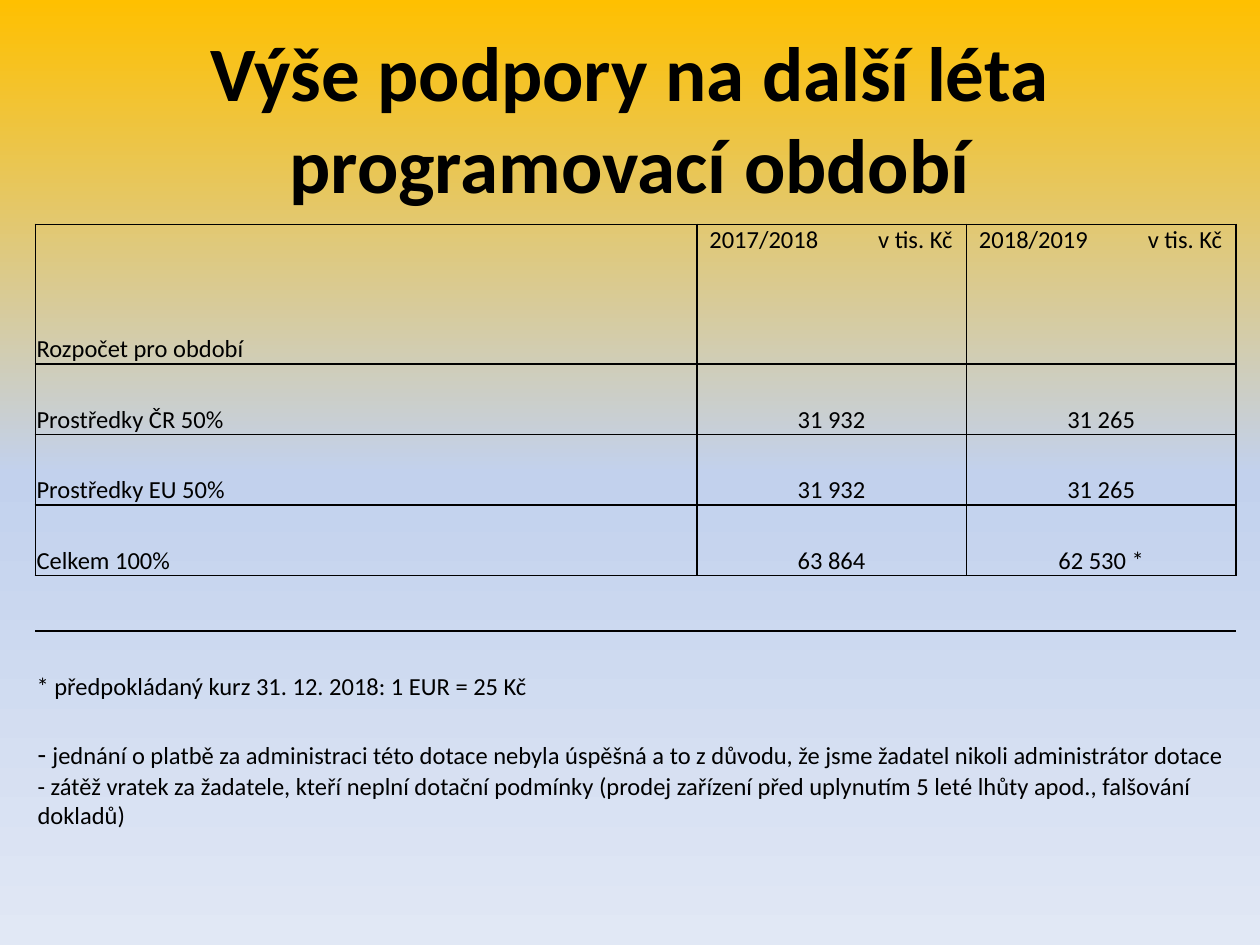
import pptx
import pptx.dml.color
import pptx.enum.text
import pptx.oxml
import pptx.oxml.ns
import pptx.util

Inches, Pt = pptx.util.Inches, pptx.util.Pt
ALIGN, ANCHOR = pptx.enum.text.PP_ALIGN, pptx.enum.text.MSO_ANCHOR
qn, nsdecls = pptx.oxml.ns.qn, pptx.oxml.ns.nsdecls

COLORS = {"text": "000000", "top": "FFC000", "middle": "C2D1ED", "bottom": "E1E8F5"}
FONT = "Calibri"
NO_STYLE = "{2D5ABB26-0587-4C30-8999-92F81FD0307C}"
TAB = Inches(1.34)

BUDGET = [
    ("Rozpočet pro období", "2017/2018\tv tis. Kč", "2018/2019\tv tis. Kč"),
    ("Prostředky ČR 50%", "31 932", "31 265"),
    ("Prostředky EU 50%", "31 932", "31 265"),
    ("Celkem 100%", "63 864", "62 530 *"),
]
RATE_NOTE = "* předpokládaný kurz 31. 12. 2018: 1 EUR = 25 Kč"
REMARKS = [
    [("- ", 16), ("jednání o platbě za administraci této dotace nebyla úspěšná a to z důvodu, "
                  "že jsme žadatel nikoli administrátor dotace", 14)],
    [("- zátěž vratek za žadatele, kteří neplní dotační podmínky (prodej zařízení "
      "před uplynutím 5 leté lhůty apod., falšování dokladů)", 14)],
]


def add_run(p, text, size=14, bold=False, color="text"):
    r = p.add_run()
    r.text = text
    r.font.name, r.font.size, r.font.bold = FONT, Pt(size), bold
    r.font.color.rgb = pptx.dml.color.RGBColor.from_string(COLORS[color])


class SlideBuilder:
    def __init__(self, prs):
        self.s = prs.slides.add_slide(prs.slide_layouts[6])

    def background(self, *stops):
        fill = self.s.background.fill
        fill.gradient()
        fill.gradient_angle = 270
        gs_list = self.s.element.find(".//" + qn("a:gsLst"))
        for gs in list(gs_list):
            gs_list.remove(gs)
        for pos, color in stops:
            gs_list.append(pptx.oxml.parse_xml(
                f'<a:gs {nsdecls("a")} pos="{pos * 1000}">'
                f'<a:srgbClr val="{COLORS[color]}"/></a:gs>'))

    def text(self, box, paragraphs, align=ALIGN.LEFT, anchor=ANCHOR.TOP, indent=0, bold=False):
        """Add a text box; each paragraph is a list of (text, size) runs."""
        tf = self.s.shapes.add_textbox(*map(Inches, box)).text_frame
        tf.word_wrap, tf.vertical_anchor = True, anchor
        for i, runs in enumerate(paragraphs):
            p = tf.paragraphs[0] if i == 0 else tf.add_paragraph()
            p.alignment = align
            p._p.get_or_add_pPr().set("marL", str(Inches(indent)))
            for text, size in runs:
                add_run(p, text, size, bold)

    def table(self, left, top, widths, heights):
        frame = self.s.shapes.add_table(
            len(heights), len(widths), Inches(left), Inches(top),
            Inches(sum(widths)), Inches(sum(heights)))
        table = frame.table
        table.first_row = table.horz_banding = False
        table._tbl.tblPr.find(qn("a:tableStyleId")).text = NO_STYLE
        for col, width in zip(table.columns, widths):
            col.width = Inches(width)
        for row, height in zip(table.rows, heights):
            row.height = Inches(height)
        return table

    def cell(self, cell, text="", align=ALIGN.LEFT, anchor=ANCHOR.BOTTOM, borders=""):
        """Fill in a cell; borders names its ruled sides, out of L, R, T and B."""
        tc_pr = cell._tc.get_or_add_tcPr()
        for side in borders:
            tc_pr.append(pptx.oxml.parse_xml(
                f'<a:ln{side} {nsdecls("a")} w="{Pt(1)}"><a:solidFill>'
                f'<a:srgbClr val="{COLORS["text"]}"/></a:solidFill></a:ln{side}>'))
        cell.fill.background()
        if not text:
            return
        cell.vertical_anchor = anchor
        cell.margin_left = cell.margin_right = cell.margin_top = Inches(0.01)
        cell.margin_bottom = 0
        p = cell.text_frame.paragraphs[0]
        p.alignment = align
        if "\t" in text:
            cell.margin_left, p.alignment = Inches(0.1), ALIGN.LEFT
            p._p.get_or_add_pPr().append(pptx.oxml.parse_xml(
                f'<a:tabLst {nsdecls("a")}><a:tab pos="{TAB}" algn="l"/></a:tabLst>'))
        add_run(p, text)


def main():
    prs = pptx.Presentation()
    prs.slide_width, prs.slide_height = Inches(10), Inches(7.5)
    slide = SlideBuilder(prs)
    slide.background((0, "top"), (50, "middle"), (100, "bottom"))
    slide.text((0.5, 0.3, 9, 1.25), [[("Výše podpory na další léta programovací období", 44)]],
               align=ALIGN.CENTER, anchor=ANCHOR.MIDDLE, bold=True)
    slide.text((0, 5.8, 10, 0.84), REMARKS, indent=0.2)

    table = slide.table(0.28, 1.78, [5.25, 2.14, 2.14], [1.11, 0.56, 0.56, 0.56, 0.44, 0.56])
    for i, row in enumerate(BUDGET):
        for j, text in enumerate(row):
            slide.cell(table.cell(i, j), text, borders="LRTB",
                       align=ALIGN.CENTER if j else ALIGN.LEFT,
                       anchor=ANCHOR.TOP if i == 0 and j else ANCHOR.BOTTOM)
    gap_row, note_row = len(BUDGET), len(BUDGET) + 1
    for j in range(3):
        slide.cell(table.cell(gap_row, j), borders="T")
    table.cell(note_row, 0).merge(table.cell(note_row, 2))
    slide.cell(table.cell(note_row, 0), RATE_NOTE)
    prs.save("out.pptx")


if __name__ == "__main__":
    main()
